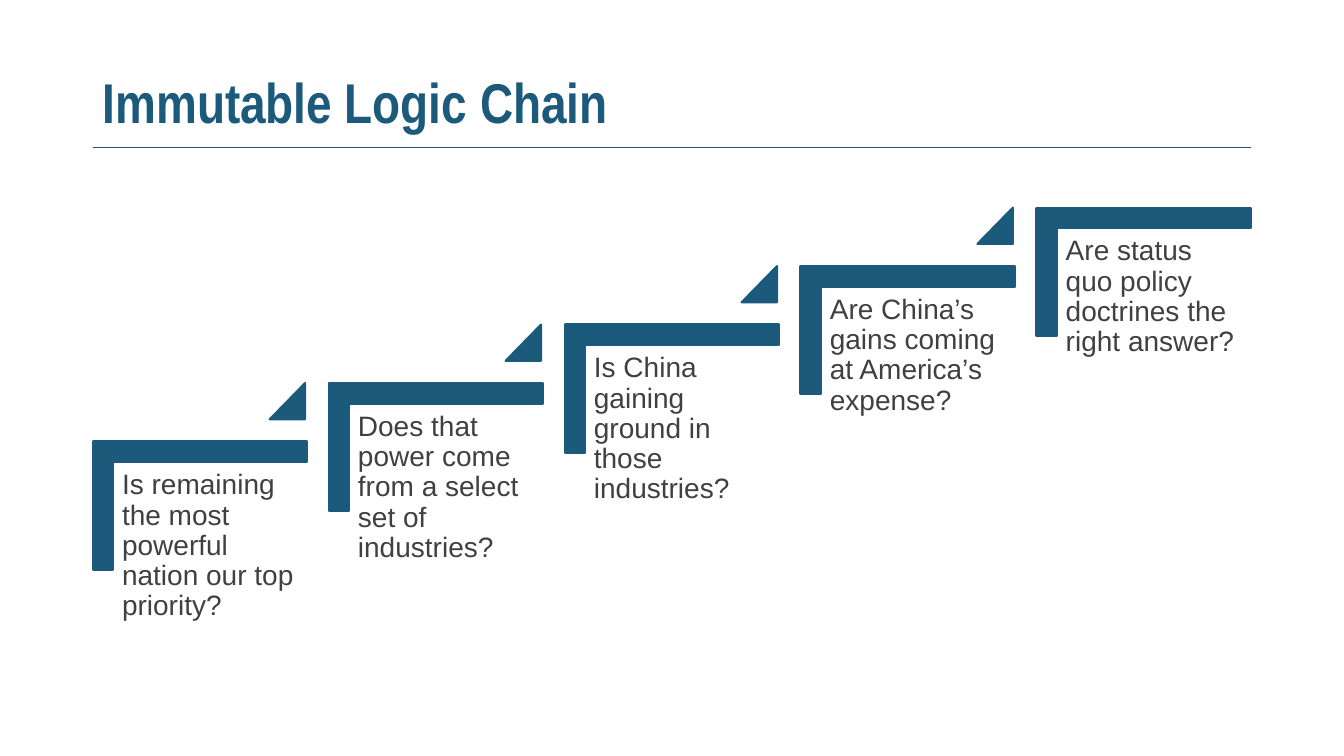
import dataclasses

import lxml.etree
import pptx
import pptx.dml.color
import pptx.enum.shapes
import pptx.enum.text
import pptx.oxml.ns
import pptx.util

SHAPES = pptx.enum.shapes.MSO_SHAPE
ANCHORS = pptx.enum.text.MSO_ANCHOR


@dataclasses.dataclass(frozen=True)
class Theme:
    accent: str = "1C5A7C"
    body: str = "404040"
    title_font: str = "Arial Narrow"
    body_font: str = "Arial"
    title_size: float = 40
    body_size: float = 20
    rule_width: float = 1.25
    outline_width: float = 1.5


@dataclasses.dataclass(frozen=True)
class Grid:
    left: float = 0.92
    top: float = 2.06
    column: float = 2.34
    row: float = 0.58

    def point(self, column, row):
        return (pptx.util.Inches(self.left + column * self.column),
                pptx.util.Inches(self.top + row * self.row))

    def size(self, columns, rows):
        return (pptx.util.Inches(columns * self.column),
                pptx.util.Inches(rows * self.row))


def apply_formats(target, formats):
    for name, value in formats.items():
        setattr(target, name, value)


def color(value):
    return pptx.dml.color.RGBColor.from_string(value)


class SlideBuilder:
    def __init__(self, slide, theme, grid):
        self.slide = slide
        self.theme = theme
        self.grid = grid

    def fill_text(self, shape, text, frame_formats, paragraph_formats, font_formats, font_color):
        frame = shape.text_frame
        apply_formats(frame, {"word_wrap": True,
                              "auto_size": pptx.enum.text.MSO_AUTO_SIZE.NONE,
                              **frame_formats})
        paragraph = frame.paragraphs[0]
        apply_formats(paragraph, {"alignment": pptx.enum.text.PP_ALIGN.LEFT,
                                  "line_spacing": 0.9, **paragraph_formats})
        run = paragraph.add_run()
        run.text = text
        apply_formats(run.font, font_formats)
        run.font.color.rgb = color(font_color)

    def title(self, text, column, row, columns, rows):
        shape = self.slide.shapes.title
        left, top = self.grid.point(column, row)
        width, height = self.grid.size(columns, rows)
        apply_formats(shape, {"left": left, "top": top, "width": width, "height": height})
        self.fill_text(shape, text, {"vertical_anchor": ANCHORS.BOTTOM}, {},
                       {"name": self.theme.title_font, "bold": True,
                        "size": pptx.util.Pt(self.theme.title_size)}, self.theme.accent)

    def rule(self, column, row, columns):
        connector = self.slide.shapes.add_connector(
            pptx.enum.shapes.MSO_CONNECTOR.STRAIGHT,
            *self.grid.point(column, row), *self.grid.point(column + columns, row))
        connector.line.color.rgb = color(self.theme.accent)
        connector.line.width = pptx.util.Pt(self.theme.rule_width)
        properties = connector.element.spPr
        lxml.etree.SubElement(properties, pptx.oxml.ns.qn("a:effectLst"))

    def preset(self, kind, left, top, width, height, adjustments):
        shape = self.slide.shapes.add_shape(kind, left, top, width, height)
        shape.shadow.inherit = False
        for index, value in enumerate(adjustments):
            shape.adjustments[index] = value
        shape.fill.solid()
        shape.fill.fore_color.rgb = color(self.theme.accent)
        shape.line.color.rgb = color(self.theme.accent)
        shape.line.width = pptx.util.Pt(self.theme.outline_width)
        return shape

    def bracket(self, column, row, columns, rows):
        left, top = self.grid.point(column, row)
        width, height = self.grid.size(columns, rows)
        shift = (width - height) // 2
        shape = self.preset(SHAPES.CORNER, left + shift, top - shift,
                            height, width, (0.16, 0.16))
        shape.rotation = 90

    def triangle(self, column, row, columns, rows):
        self.preset(SHAPES.ISOSCELES_TRIANGLE, *self.grid.point(column, row),
                    *self.grid.size(columns, rows), (1,))

    def question(self, text, column, row, columns, rows):
        shape = self.slide.shapes.add_textbox(*self.grid.point(column, row),
                                              *self.grid.size(columns, rows))
        margins = {f"margin_{side}": pptx.util.Inches(0.08)
                   for side in ("left", "top", "right", "bottom")}
        self.fill_text(shape, text, {"vertical_anchor": ANCHORS.TOP, **margins},
                       {"space_after": pptx.util.Pt(0.35 * self.theme.body_size)},
                       {"name": self.theme.body_font,
                        "size": pptx.util.Pt(self.theme.body_size)}, self.theme.body)


QUESTIONS = (
    "Is remaining the most powerful nation our top priority?",
    "Does that power come from a select set of industries?",
    "Is China gaining ground in those industries?",
    "Are China’s gains coming at America’s expense?",
    "Are status quo policy doctrines the right answer?",
)


def main():
    presentation = pptx.Presentation()
    apply_formats(presentation, {"slide_width": pptx.util.Inches(13.33),
                                 "slide_height": pptx.util.Inches(7.5)})
    slide = presentation.slides.add_slide(presentation.slide_layouts[5])
    builder = SlideBuilder(slide, Theme(), Grid())
    builder.rule(0, -1.03, 4.91)
    builder.title("Immutable Logic Chain", 0, -2.86, 4.91, 1.72)
    last = len(QUESTIONS) - 1
    for column, text in enumerate(QUESTIONS):
        row = last - column
        builder.bracket(column, row, 0.91, 2.19)
        builder.question(text, column + 0.09, row + 0.36, 0.82, 2.9)
        if column < last:
            builder.triangle(column + 0.75, row - 1, 0.15, 0.62)
    presentation.save("out.pptx")


if __name__ == "__main__":
    main()
